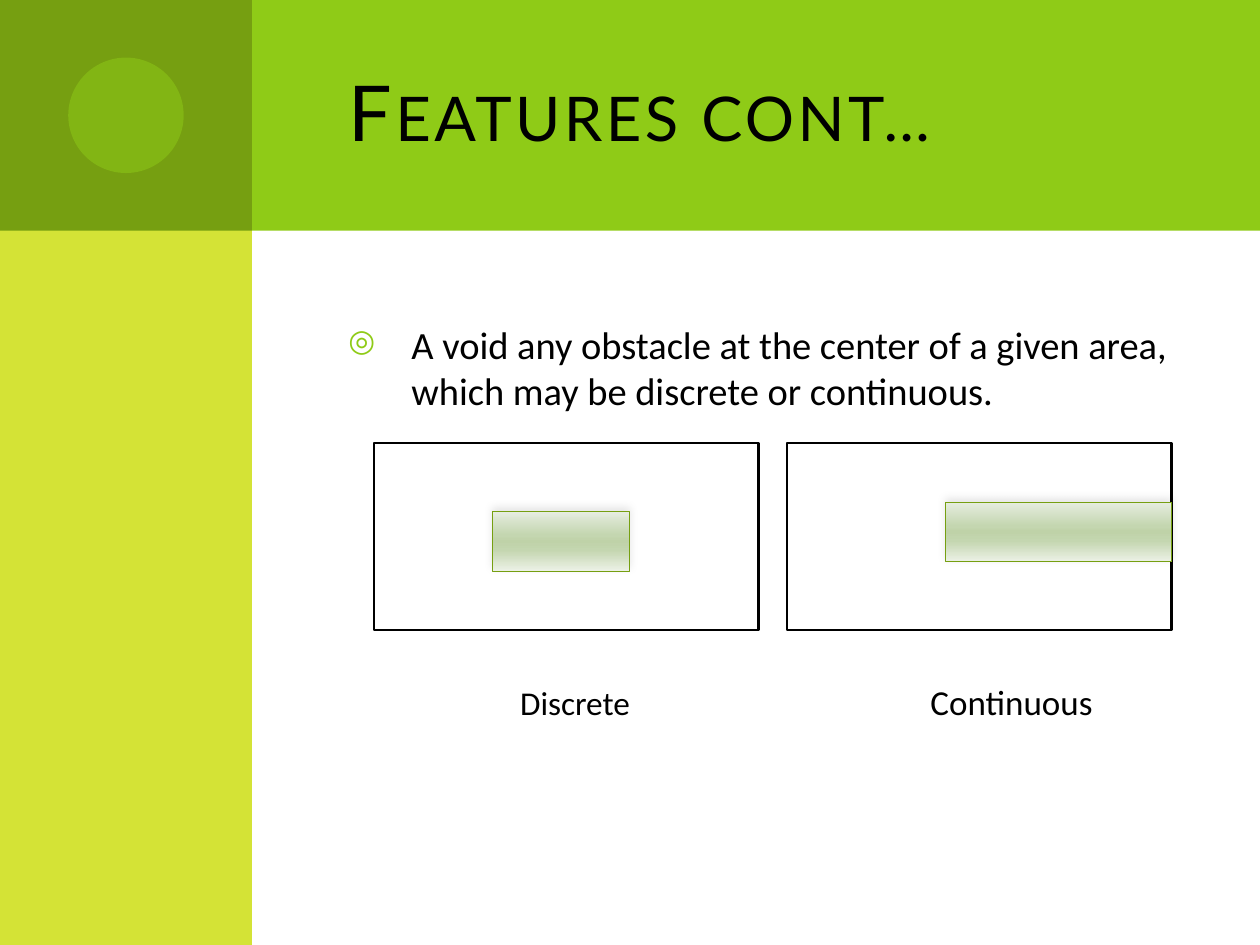
from lxml import etree
from pptx import Presentation
from pptx.dml.color import RGBColor
from pptx.enum.shapes import MSO_SHAPE
from pptx.enum.text import MSO_ANCHOR, PP_ALIGN
from pptx.oxml.ns import qn
from pptx.util import Pt

RECT, OVAL = MSO_SHAPE.RECTANGLE, MSO_SHAPE.OVAL
TOP, MIDDLE = MSO_ANCHOR.TOP, MSO_ANCHOR.MIDDLE
LEFT, CENTER = PP_ALIGN.LEFT, PP_ALIGN.CENTER
BLACK, WHITE = RGBColor(0, 0, 0), RGBColor(255, 255, 255)
GREEN = RGBColor(0x8F, 0xCB, 0x17)
DARK = RGBColor(0x76, 0x9F, 0x11)
LIME = RGBColor(0xD4, 0xE3, 0x36)
STOPS = [(0, "E6EDE0"), (40, "C4D6B0"), (50, "BFD2A8"),
         (65, "C4D6B0"), (100, "ECF1E6")]

WIDE, HIGH = 720, 540
SIDE, HEAD = 144, 131.8
DOT = 66
TITLE = "Features cont…"
BODY = ("A void any obstacle at the center of a given area, "
        "which may be discrete or continuous.")
AREA_TOP, AREA_W, AREA_H = 253.3, 219.6, 106.8
BAR_H = 34
# label, size, label centre, area left, bar left, bar top, bar width
AREAS = [("Discrete", 19, 328.6, 213.8, 281.4, 292.3, 78.5),
         ("Continuous", 20, 578, 449.9, 540.2, 287, 129.3)]


def add(tag, parent, **attrs):
    return etree.SubElement(parent, qn(tag), **attrs)


def draw(kind, x, y, w, h, fill, line=None, width=0):
    shape = slide.shapes.add_shape(kind, Pt(x), Pt(y), Pt(w), Pt(h))
    shape.shadow.inherit = False
    shape.fill.solid()
    shape.fill.fore_color.rgb = fill
    if line is None:
        shape.line.fill.background()
    else:
        shape.line.color.rgb = line
        shape.line.width = Pt(width)
    return shape


def write(text, x, y, w, h, size, font="Calibri", align=LEFT, anchor=TOP):
    box = slide.shapes.add_textbox(Pt(x), Pt(y), Pt(w), Pt(h))
    frame = box.text_frame
    frame.word_wrap = True
    frame.vertical_anchor = anchor
    para = frame.paragraphs[0]
    para.alignment = align
    run = para.add_run()
    run.text = text
    run.font.name, run.font.size = font, Pt(size)
    run.font.color.rgb = BLACK
    return para, run


def shade(bar):
    """Give a bar its banded gradient and faint shadow."""
    bar.fill.gradient()
    props = bar.fill._xPr
    stops = props.find(".//" + qn("a:gsLst"))
    for old in list(stops):
        stops.remove(old)
    for pos, color in STOPS:
        stop = add("a:gs", stops, pos=str(pos * 1000))
        add("a:srgbClr", stop, val=color)
    props.find(".//" + qn("a:lin")).set("ang", "5400000")
    cast = add("a:outerShdw", props.find(qn("a:effectLst")),
               blurRad=str(Pt(5)), dist=str(Pt(2)), dir=str(267 * 60000),
               rotWithShape="0")
    add("a:alpha", add("a:srgbClr", cast, val=str(BLACK)), val="10000")


def bullet(para):
    props = para._p.get_or_add_pPr()
    props.set("marL", str(Pt(36)))
    props.set("indent", str(Pt(-36)))
    add("a:srgbClr", add("a:buClr", props), val=str(GREEN))
    add("a:buSzPct", props, val="80000")
    add("a:buChar", props, char="◎")


deck = Presentation()
deck.slide_width, deck.slide_height = Pt(WIDE), Pt(HIGH)
slide = deck.slides.add_slide(deck.slide_layouts[6])

draw(RECT, 36, 0, WIDE - 36, HEAD, GREEN)
draw(RECT, 0, 0, SIDE, HIGH, LIME)
draw(RECT, 0, 0, SIDE, HEAD, DARK)
dot = draw(OVAL, (SIDE - DOT) / 2, (HEAD - DOT) / 2, DOT, DOT, GREEN)
add("a:alpha", dot.fill._xPr.find(".//" + qn("a:srgbClr")), val="50000")

_, run = write(TITLE, 192, 18, 492, 90, 44, "Lato", anchor=MIDDLE)
props = run.font._element
props.set("cap", "small")
props.set("spc", "200")

para, _ = write(BODY, 192, 180, 492, 66, 22)
bullet(para)

for label, size, mid, left, bar_x, bar_y, bar_w in AREAS:
    draw(RECT, left, AREA_TOP, AREA_W, AREA_H, WHITE, BLACK, 1.29)
    shade(draw(RECT, bar_x, bar_y, bar_w, BAR_H, WHITE, DARK, 0.5))
    write(label, mid - 70, 385, 140, 32, size, align=CENTER, anchor=MIDDLE)

deck.save("out.pptx")
